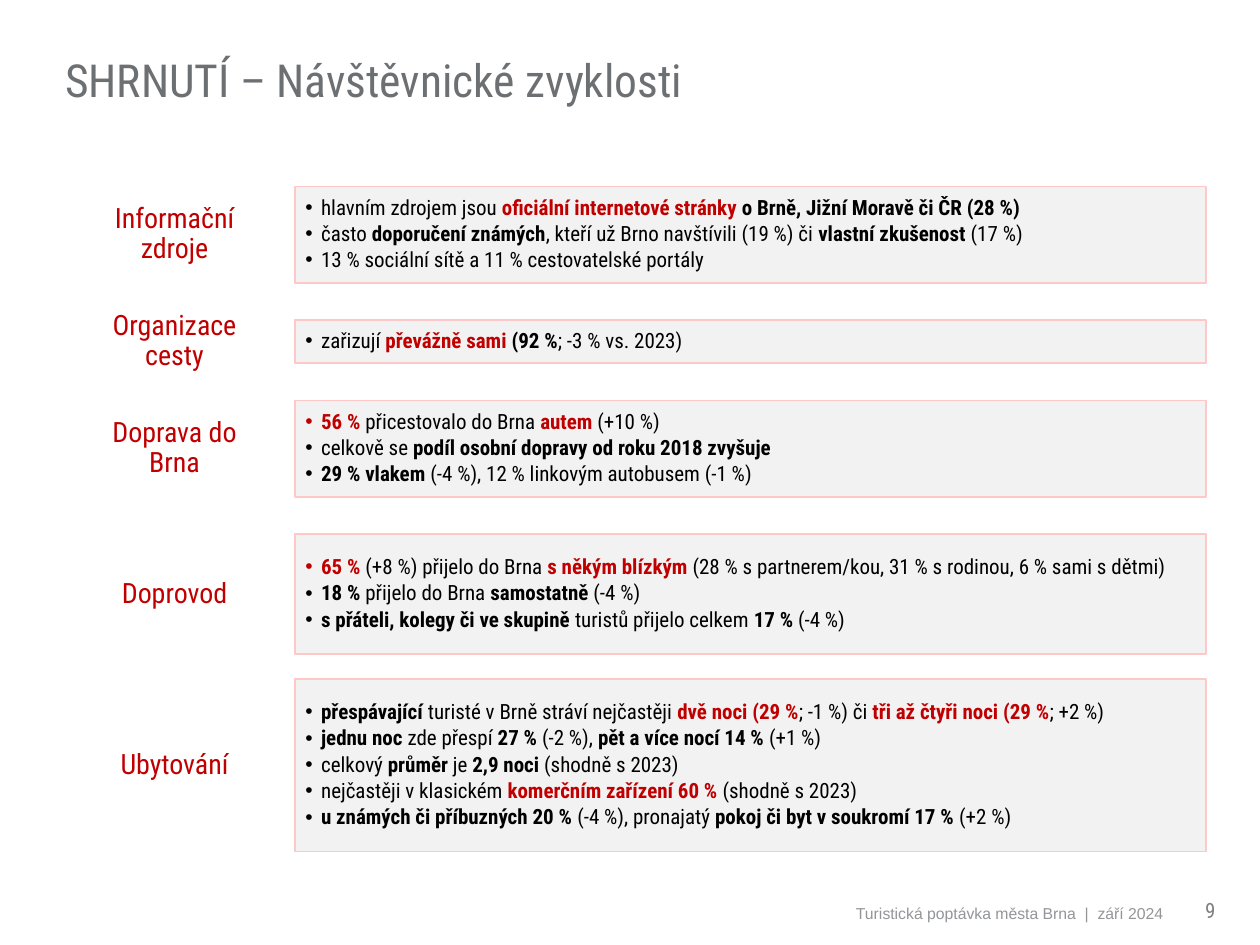
from pptx import Presentation
from pptx.dml.color import RGBColor
from pptx.enum.shapes import MSO_SHAPE as Shape
from pptx.enum.text import MSO_ANCHOR as Anchor, PP_ALIGN as Align
from pptx.oxml.ns import qn
from pptx.util import Pt
from lxml import etree

COLORS = {"title": "6D7073", "red": "C00000", "text": "000000", "fill": "F2F2F2",
          "edge": "FFC8C8", "foot": "939598", "page": "808080"}
FONT = "Roboto Condensed"
LEFT, TOP, WIDTH = 42.5, 106.6, 646.6
LABEL_W, GAP = 114.5, 11.5

# Each row: label, height, space below, lines.
# Runs are split by "|"; "*" starts a bold run, "#" a bold red one.
ROWS = [
    ("Informační zdroje", 55, 21.4, [
        "hlavním zdrojem jsou |#oficiální internetové stránky |*o Brně, Jižní Moravě či ČR (28 %)",
        "často |*doporučení známých|, kteří už Brno navštívili (19 %) či |*vlastní zkušenost |(17 %)",
        "13 % sociální sítě a 11 % cestovatelské portály"]),
    ("Organizace cesty", 24.5, 21.4, [
        "zařizují |#převážně sami|* (92 %|; -3 % vs. 2023)"]),
    ("Doprava do Brna", 55, 21.4, [
        "#56 %| přicestovalo do Brna |#autem| (+10 %)",
        "celkově se |*podíl osobní dopravy od roku 2018 zvyšuje",
        "*29 % vlakem |(-4 %), 12 % linkovým autobusem (-1 %)"]),
    ("Doprovod", 68.4, 14.4, [
        "#65 %| (+8 %) přijelo do Brna |#s někým blízkým "
        "|(28 % s partnerem/kou, 31 % s rodinou, 6 % sami s dětmi)",
        "*18 %| přijelo do Brna |*samostatně |(-4 %)",
        "*s přáteli, kolegy či ve skupině |turistů přijelo celkem |*17 %| (-4 %)"]),
    ("Ubytování", 98.6, 0, [
        "*přespávající |turisté v Brně stráví nejčastěji |#dvě noci (29 %|; -1 %) či "
        "|#tři až čtyři noci (29 %|; +2 %)",
        "*jednu noc |zde přespí |*27 %| (-2 %), |*pět a více nocí 14 % |(+1 %)",
        "celkový |*průměr| je |*2,9 noci |(shodně s 2023)",
        "nejčastěji v klasickém |#komerčním zařízení 60 % |(shodně s 2023)",
        "*u známých či příbuzných 20 % |(-4 %), pronajatý "
        "|*pokoj či byt v soukromí 17 % |(+2 %)"]),
]


def style(font, size, color, name=FONT, bold=False):
    font.size, font.name, font.bold = Pt(size), name, bold
    font.color.rgb = RGBColor.from_string(COLORS[color])


def set_frame(frame, anchor, side=7.2, edge=3.6):
    frame.word_wrap = True
    frame.vertical_anchor = anchor
    frame.margin_left = frame.margin_right = Pt(side)
    frame.margin_top = frame.margin_bottom = Pt(edge)


def add_text(slide, box, text, size, color, align=Align.LEFT,
             anchor=Anchor.MIDDLE, name=FONT):
    frame = slide.shapes.add_textbox(*map(Pt, box)).text_frame
    set_frame(frame, anchor)
    frame.text = text
    para = frame.paragraphs[0]
    para.alignment = align
    style(para.runs[0].font, size, color, name)
    return frame


def add_bullet(para):
    props = para._p.get_or_add_pPr()
    props.set("marL", str(Pt(9)))
    props.set("indent", str(-Pt(9)))
    etree.SubElement(props, qn("a:buFont"), typeface="Arial")
    etree.SubElement(props, qn("a:buChar"), char="•")


def fill_line(para, line):
    """Write one marked-up line as a bulleted paragraph."""
    add_bullet(para)
    para.alignment = Align.LEFT
    para.line_spacing, para.space_after = 0.9, Pt(2.1)
    for part in line.split("|"):
        run = para.add_run()
        run.text = part.lstrip("*#")
        style(run.font, 12, "red" if part[0] == "#" else "text", bold=part[0] in "*#")


def add_panel(slide, box, lines):
    panel = slide.shapes.add_shape(Shape.RECTANGLE, *map(Pt, box))
    panel.shadow.inherit = False
    panel.fill.solid()
    panel.fill.fore_color.rgb = RGBColor.from_string(COLORS["fill"])
    panel.line.color.rgb = RGBColor.from_string(COLORS["edge"])
    panel.line.width = Pt(1)
    frame = panel.text_frame
    set_frame(frame, Anchor.MIDDLE, 6, 6)
    for i, line in enumerate(lines):
        fill_line(frame.add_paragraph() if i else frame.paragraphs[0], line)


def add_row(slide, box, label, lines):
    left, top, width, height = box
    frame = add_text(slide, (left, top, LABEL_W, height), label, 16, "red", Align.CENTER)
    set_frame(frame, Anchor.MIDDLE, 8.6, 6)
    frame.paragraphs[0].line_spacing = 0.9
    shift = LABEL_W + GAP
    add_panel(slide, (left + shift, top, width - shift, height), lines)


def add_rows(slide, left, top, width):
    for label, height, space, lines in ROWS:
        add_row(slide, (left, top, width, height), label, lines)
        top += height + space


def add_footer(slide, left, top, width, height):
    page = 39.6
    add_text(slide, (left, top, width - page, height),
             "Turistická poptávka města Brna  |  září 2024", 9, "foot",
             Align.RIGHT, Anchor.BOTTOM, "Arial")
    add_text(slide, (left + width - page, top, page, height), "9", 12, "page",
             Align.CENTER, Anchor.BOTTOM)


def main():
    deck = Presentation()
    deck.slide_width, deck.slide_height = Pt(720), Pt(540)
    slide = deck.slides.add_slide(deck.slide_layouts[6])
    add_text(slide, (30.2, 9.4, 516.2, 71.3), "SHRNUTÍ – Návštěvnické zvyklosti", 26, "title")
    add_rows(slide, LEFT, TOP, WIDTH)
    add_footer(slide, 35.3, 502.6, 676.1, 28.1)
    deck.save("out.pptx")


if __name__ == "__main__":
    main()
